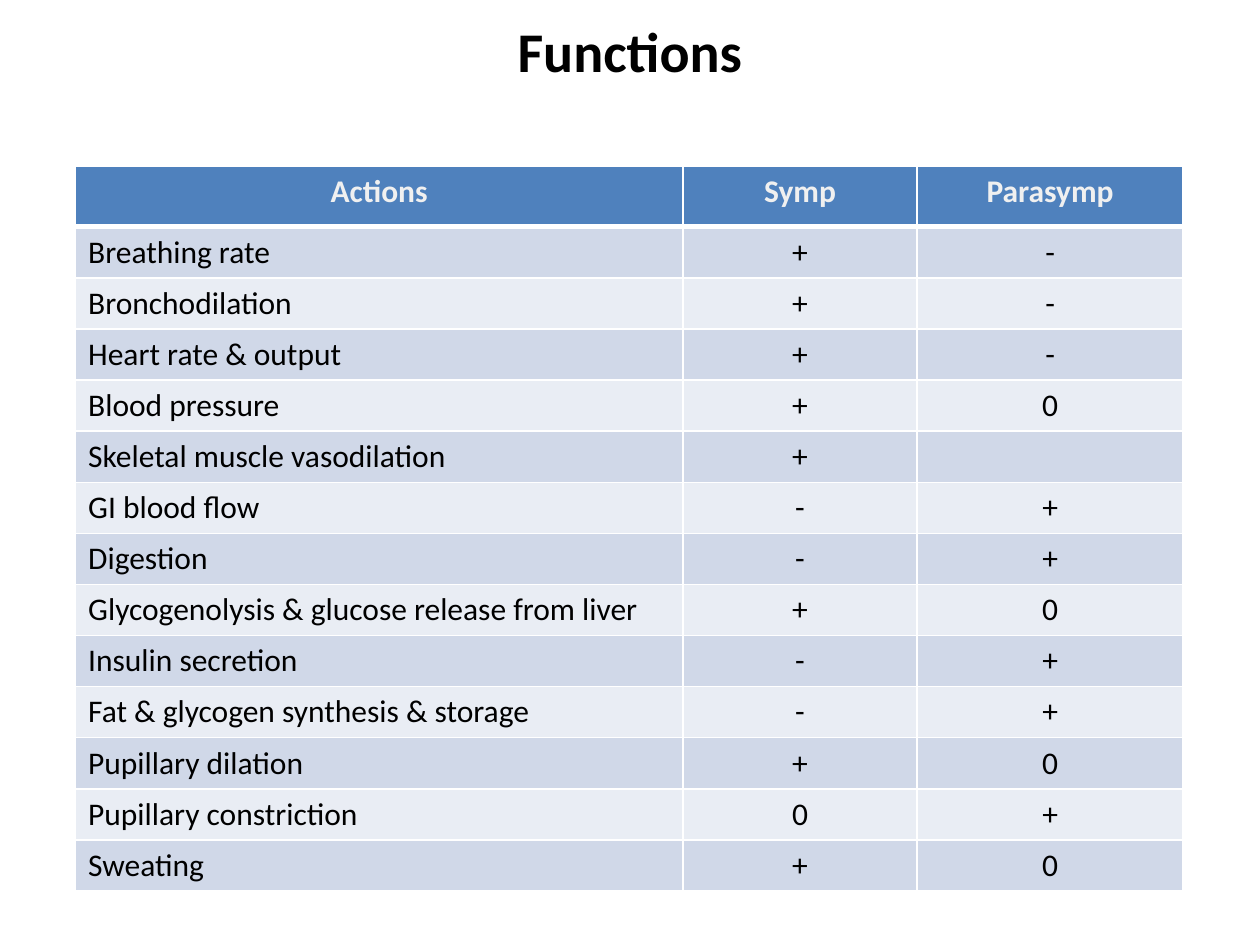
from lxml import etree
from pptx import Presentation
from pptx.dml.color import RGBColor
from pptx.enum.text import MSO_ANCHOR, PP_ALIGN
from pptx.oxml.ns import qn
from pptx.util import Inches, Pt

CENTER, LEFT = PP_ALIGN.CENTER, PP_ALIGN.LEFT
MIDDLE = MSO_ANCHOR.MIDDLE
FONT = "Calibri"
COLORS = {
    "background": "FFFFFF",
    "border": "FFFFFF",
    "header": "4F81BD",
    "header_text": "F0F0F0",
    "dark_band": "D0D8E8",
    "light_band": "E9EDF4",
    "text": "000000",
}
COLUMN_WIDTHS = [4.82, 1.86, 2.11]
HEADER_HEIGHT, ROW_HEIGHT = 0.48, 0.35
ACTIONS = [
    ("Actions", "Symp", "Parasymp"),
    ("Breathing rate", "+", "-"),
    ("Bronchodilation", "+", "-"),
    ("Heart rate & output", "+", "-"),
    ("Blood pressure", "+", "0"),
    ("Skeletal muscle vasodilation", "+", ""),
    ("GI blood flow", "-", "+"),
    ("Digestion", "-", "+"),
    ("Glycogenolysis & glucose release from liver", "+", "0"),
    ("Insulin secretion", "-", "+"),
    ("Fat & glycogen synthesis & storage", "-", "+"),
    ("Pupillary dilation", "+", "0"),
    ("Pupillary constriction", "0", "+"),
    ("Sweating", "+", "0"),
]


def format_paragraph(paragraph, size, color, bold, align):
    paragraph.alignment = align
    font = paragraph.font
    font.name, font.size, font.bold = FONT, Pt(size), bold
    font.color.rgb = RGBColor.from_string(COLORS[color])


def add_borders(cell, bottom_width):
    widths = {"a:lnL": 1, "a:lnR": 1, "a:lnT": 1, "a:lnB": bottom_width}
    for side, width in widths.items():
        line = etree.SubElement(cell._tc.get_or_add_tcPr(), qn(side), w=str(Pt(width)))
        fill = etree.SubElement(line, qn("a:solidFill"))
        etree.SubElement(fill, qn("a:srgbClr"), val=COLORS["border"])


prs = Presentation()
prs.slide_width, prs.slide_height = Inches(10), Inches(7.5)
slide = prs.slides.add_slide(prs.slide_layouts[5])
slide.background.fill.solid()
slide.background.fill.fore_color.rgb = RGBColor.from_string(COLORS["background"])

# Title, centred on the slide
title = slide.shapes.title
title.left, title.top = Inches(4), Inches(0.08)
title.width, title.height = Inches(2), Inches(0.64)
title.text_frame.text = "Functions"
title.text_frame.word_wrap = False
title.text_frame.vertical_anchor = MIDDLE
format_paragraph(title.text_frame.paragraphs[0], 32, "text", True, CENTER)

# Table grid
functions = slide.shapes.add_table(
    len(ACTIONS), len(COLUMN_WIDTHS), Inches(0.6), Inches(1.32),
    Inches(sum(COLUMN_WIDTHS)),
    Inches(HEADER_HEIGHT + ROW_HEIGHT * (len(ACTIONS) - 1)),
).table
for column, width in zip(functions.columns, COLUMN_WIDTHS):
    column.width = Inches(width)

# Header row, then alternating bands
for r, entries in enumerate(ACTIONS):
    is_header = r == 0
    functions.rows[r].height = Inches(HEADER_HEIGHT if is_header else ROW_HEIGHT)
    band = "header" if is_header else "dark_band" if r % 2 else "light_band"
    text_color = "header_text" if is_header else "text"
    for c, entry in enumerate(entries):
        cell = functions.cell(r, c)
        cell.text = entry
        align = CENTER if is_header or c else LEFT
        format_paragraph(cell.text_frame.paragraphs[0], 18, text_color, is_header, align)
        add_borders(cell, 3 if r == 0 else 1)
        cell.fill.solid()
        cell.fill.fore_color.rgb = RGBColor.from_string(COLORS[band])

# The second row shares the thick line under the header
for cell in functions.rows[1].cells:
    cell._tc.tcPr.find(qn("a:lnT")).set("w", str(Pt(3)))

prs.save("out.pptx")
